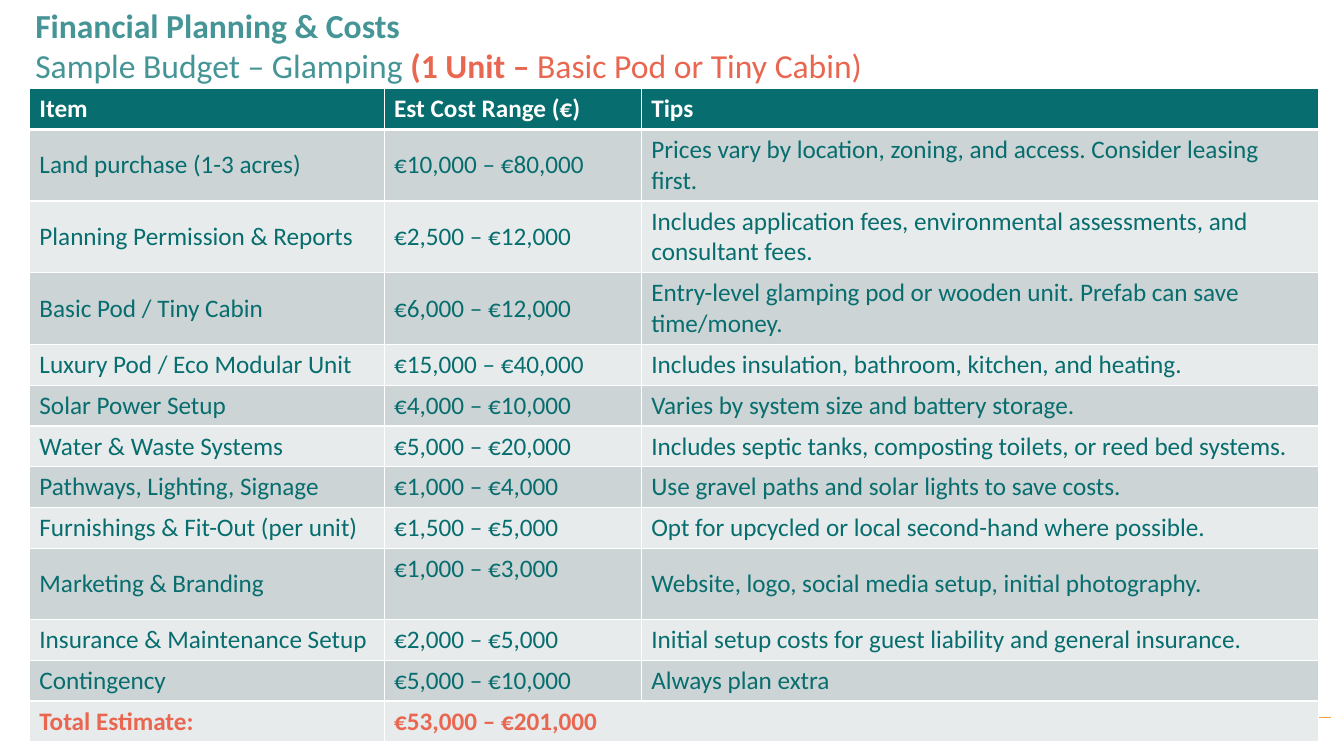
import pptx
import pptx.util
import pptx.dml.color
import pptx.enum.shapes
import pptx.enum.text
import pptx.oxml.ns
from lxml import etree

Cm, Pt = pptx.util.Cm, pptx.util.Pt
ANCHOR = pptx.enum.text.MSO_ANCHOR

# Content
TEAL, DARK, CORAL, AMBER, WHITE = "459597", "086D6E", "E96751", "FBA63D", "FFFFFF"
BANDS = ["CCD4D5", "E7EBEB"]

# Each span is text, colour, bold
TITLE = [
    [("Financial Planning & Costs", TEAL, True)],
    [("Sample Budget – Glamping ", TEAL, False),
     ("(1 Unit – ", CORAL, True),
     ("Basic Pod or Tiny Cabin)", CORAL, False)],
]
HEADER = ("Item", "Est Cost Range (€)", "Tips")
COSTS = [
    ("Land purchase (1-3 acres)", "€10,000 – €80,000",
     "Prices vary by location, zoning, and access. Consider leasing first."),
    ("Planning Permission & Reports", "€2,500 – €12,000",
     "Includes application fees, environmental assessments, and consultant fees."),
    ("Basic Pod / Tiny Cabin", "€6,000 – €12,000",
     "Entry-level glamping pod or wooden unit. Prefab can save time/money."),
    ("Luxury Pod / Eco Modular Unit", "€15,000 – €40,000",
     "Includes insulation, bathroom, kitchen, and heating."),
    ("Solar Power Setup", "€4,000 – €10,000",
     "Varies by system size and battery storage."),
    ("Water & Waste Systems", "€5,000 – €20,000",
     "Includes septic tanks, composting toilets, or reed bed systems."),
    ("Pathways, Lighting, Signage", "€1,000 – €4,000",
     "Use gravel paths and solar lights to save costs."),
    ("Furnishings & Fit-Out (per unit)", "€1,500 – €5,000",
     "Opt for upcycled or local second-hand where possible."),
    ("Marketing & Branding", "€1,000 – €3,000",
     "Website, logo, social media setup, initial photography."),
    ("Insurance & Maintenance Setup", "€2,000 – €5,000",
     "Initial setup costs for guest liability and general insurance."),
    ("Contingency", "€5,000 – €10,000", "Always plan extra"),
]
TOTAL = ("Total Estimate:", "€53,000 – €201,000")

# Table measures in cm
TABLE_LEFT, TABLE_TOP = 0.74, 2.23
COLUMN_WIDTHS = [8.94, 6.48, 17.07]
LOW_ROW, TALL_ROW = 1.03, 1.78
TALL_ROWS = {1, 2, 3, 9}
MARKETING_ROW = 9


def colour(code):
    return pptx.dml.color.RGBColor.from_string(code)


def add_spans(para, spans, size):
    for text, code, bold in spans:
        span = para.add_run()
        span.text = text
        look = {"name": "Calibri", "size": Pt(size), "bold": bold}
        for key, value in look.items():
            setattr(span.font, key, value)
        span.font.color.rgb = colour(code)


def add_title(page):
    frame = page.shapes.add_textbox(Cm(0.64), Cm(0), Cm(29.49), Cm(2.24)).text_frame
    frame.word_wrap = True
    for number, spans in enumerate(TITLE):
        para = frame.add_paragraph() if number else frame.paragraphs[0]
        add_spans(para, spans, 24)


def set_borders(cell, widths):
    properties = cell._tc.get_or_add_tcPr()
    for position, (side, points) in enumerate(widths.items()):
        line = etree.Element(pptx.oxml.ns.qn("a:" + side), w=str(Pt(points)))
        fill = etree.SubElement(line, pptx.oxml.ns.qn("a:solidFill"))
        etree.SubElement(fill, pptx.oxml.ns.qn("a:srgbClr"), val=WHITE)
        properties.insert(position, line)


def add_side_rule(page):
    # Short rule from the table's right edge
    start = TABLE_LEFT + sum(COLUMN_WIDTHS)
    rule = page.shapes.add_connector(
        pptx.enum.shapes.MSO_CONNECTOR.STRAIGHT,
        Cm(start), Cm(18.08), Cm(33.55), Cm(18.08))
    rule.line.color.rgb = colour(AMBER)
    rule.line.width = Pt(0.75)
    etree.SubElement(rule._element.spPr, pptx.oxml.ns.qn("a:effectLst"))


def add_budget(page):
    rows = [HEADER, *COSTS, TOTAL]
    last = len(rows) - 1
    heights = [TALL_ROW if r in TALL_ROWS else LOW_ROW for r in range(len(rows))]
    table = page.shapes.add_table(
        len(rows), len(HEADER), Cm(TABLE_LEFT), Cm(TABLE_TOP),
        Cm(sum(COLUMN_WIDTHS)), Cm(sum(heights))).table
    for column, width in zip(table.columns, COLUMN_WIDTHS):
        column.width = Cm(width)
    table.cell(last, 1).merge(table.cell(last, 2))

    for r, row in enumerate(rows):
        table.rows[r].height = Cm(heights[r])
        back = BANDS[(r - 1) % 2] if r else DARK
        ink = {0: WHITE, last: CORAL}.get(r, DARK)
        for c, text in enumerate(row):
            cell = table.cell(r, c)
            # The marketing cost sits at the top of its tall row
            raised = r == MARKETING_ROW and c == 1
            cell.vertical_anchor = ANCHOR.TOP if raised else ANCHOR.MIDDLE
            cell.fill.solid()
            cell.fill.fore_color.rgb = colour(back)
            set_borders(cell, {"lnL": 1, "lnR": 1,
                               "lnT": 3 if r == 1 else 1,
                               "lnB": 3 if r == 0 else 1})
            add_spans(cell.text_frame.paragraphs[0],
                      [(text, ink, r in (0, last))], 18)


def main():
    deck = pptx.Presentation()
    deck.slide_width, deck.slide_height = Cm(33.87), Cm(19.05)
    page = deck.slides.add_slide(deck.slide_layouts[6])
    add_side_rule(page)
    add_budget(page)
    add_title(page)
    deck.save("out.pptx")


if __name__ == "__main__":
    main()
